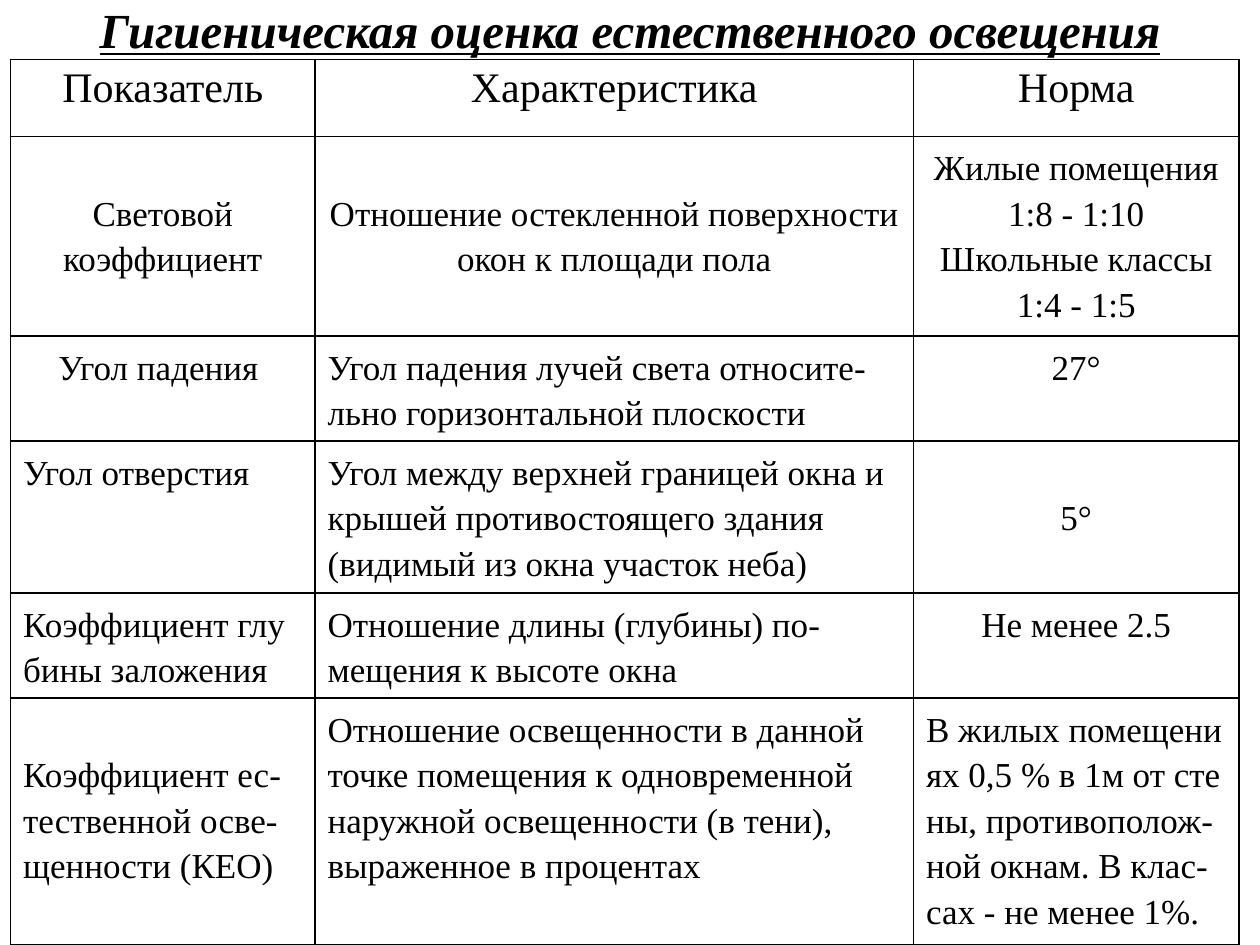
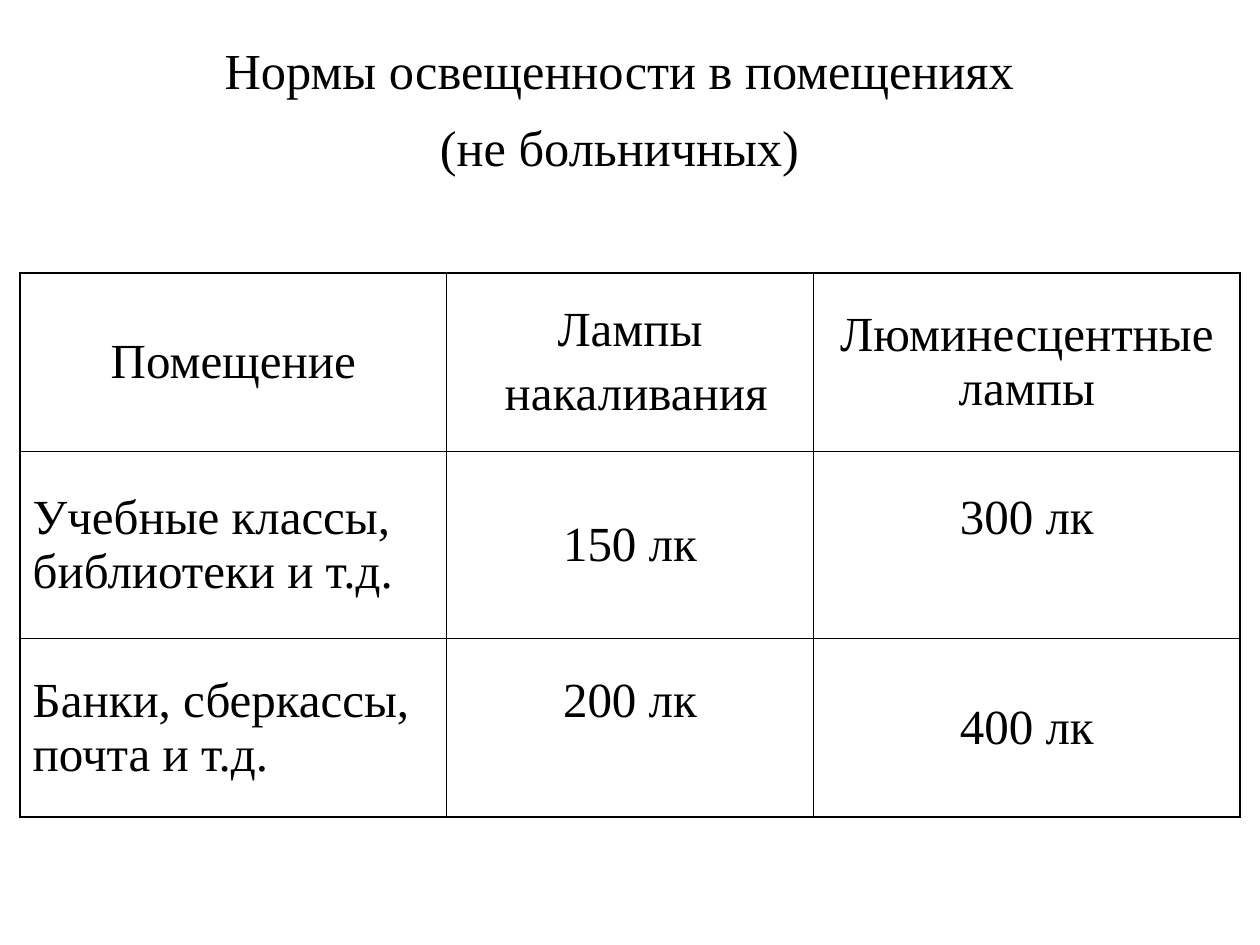
from lxml import etree
from pptx import Presentation
from pptx.dml.color import RGBColor
from pptx.enum.text import MSO_ANCHOR, PP_ALIGN
from pptx.oxml.ns import qn
from pptx.util import Pt

LEFT, CENTER = PP_ALIGN.LEFT, PP_ALIGN.CENTER
TOP, MIDDLE = MSO_ANCHOR.TOP, MSO_ANCHOR.MIDDLE
BLACK = RGBColor(0, 0, 0)
FONT = "Times New Roman"
BLANK_LAYOUT = 6
CELL_MARGIN = 3.6

# A cell is its text, one paragraph a line, then any format values that differ
# from the table's own; pad_top and pad_bottom are extra margins in points.
SLIDES = [
    {
        "title": {
            "text": "Гигиеническая оценка естественного освещения",
            "place": (0, -6, 720, 45),
            "font": {"size": Pt(28), "bold": True, "italic": True, "underline": True},
            "paragraph": {},
        },
        "table": {
            "place": (6, 34),
            "columns": (174, 342, 186),
            "rows": (44, 114, 60, 87, 60, 141),
            "header_size": 24,
            "body_size": 20,
            "anchor": TOP,
            "paragraph": {"line_spacing": Pt(26)},
            "cells": [
                [("Показатель", {}), ("Характеристика", {}), ("Норма", {})],
                [("Световой коэффициент", {"pad_top": 26}),
                 ("Отношение остекленной поверхности окон к площади пола", {"pad_top": 26}),
                 ("Жилые помещения\n1:8 - 1:10\nШкольные классы\n1:4 - 1:5", {})],
                [("Угол падения ", {}),
                 ("Угол падения лучей света относите-льно горизонтальной плоскости",
                  {"align": LEFT}),
                 ("27°", {})],
                [("Угол отверстия", {"align": LEFT}),
                 ("Угол между верхней границей окна и крышей противостоящего здания "
                  "(видимый из окна участок неба)", {"align": LEFT}),
                 ("5°", {"pad_top": 26})],
                [("Коэффициент глу бины заложения", {"align": LEFT}),
                 ("Отношение длины (глубины) по-мещения к высоте окна", {"align": LEFT}),
                 ("Не менее 2.5", {})],
                [("Коэффициент ес-тественной осве-щенности (КЕО)",
                  {"align": LEFT, "pad_top": 26}),
                 ("Отношение освещенности в данной точке помещения к одновременной "
                  "наружной освещенности (в тени), выраженное в процентах", {"align": LEFT}),
                 ("В жилых помещени ях 0,5 % в 1м от сте ны, противополож-ной окнам. "
                  "В клас-сах - не менее 1%.", {"align": LEFT})],
            ],
        },
    },
    {
        "title": {
            "text": "Нормы освещенности в помещениях\n(не больничных)",
            "place": (0, 12, 708, 90),
            "font": {"size": Pt(28.8)},
            "paragraph": {"line_spacing": Pt(44)},
        },
        "table": {
            "place": (11.5, 156),
            "columns": (243.5, 210, 243.5),
            "rows": (102, 107, 102),
            "header_size": 28,
            "body_size": 28,
            "anchor": MIDDLE,
            "paragraph": {"space_before": Pt(5.6)},
            "cells": [
                [("Помещение", {}), ("Лампы\n накаливания", {}),
                 ("Люминесцентные лампы", {})],
                [("Учебные классы, библиотеки и т.д.", {"align": LEFT}),
                 ("150 лк", {}), ("300 лк", {"pad_bottom": 31})],
                [("Банки, сберкассы, почта и т.д.", {"align": LEFT}),
                 ("200 лк", {"pad_bottom": 31}), ("400 лк", {})],
            ],
        },
    },
]


def set_values(target, values):
    for name, value in values.items():
        setattr(target, name, value)


def write_text(frame, text, font, paragraph):
    for index, line in enumerate(text.split("\n")):
        para = frame.paragraphs[0] if index == 0 else frame.add_paragraph()
        set_values(para, paragraph)
        span = para.add_run()
        span.text = line
        set_values(span.font, {"name": FONT, **font})
        span.font.color.rgb = BLACK


def draw_borders(cell):
    properties = cell._tc.get_or_add_tcPr()
    for position, side in enumerate(("lnL", "lnR", "lnT", "lnB")):
        line = etree.Element(qn(f"a:{side}"), w=str(Pt(1)))
        fill = etree.SubElement(line, qn("a:solidFill"))
        etree.SubElement(fill, qn("a:srgbClr"), val=str(BLACK))
        properties.insert(position, line)


def add_title(page, title):
    box = page.shapes.add_textbox(*map(Pt, title["place"]))
    set_values(box.text_frame, {"word_wrap": True, "vertical_anchor": MIDDLE})
    write_text(box.text_frame, title["text"], title["font"],
               {"alignment": CENTER, **title["paragraph"]})


def add_grid(page, grid):
    columns, rows = grid["columns"], grid["rows"]
    size = (sum(columns), sum(rows))
    table = page.shapes.add_table(len(rows), len(columns),
                                  *map(Pt, grid["place"] + size)).table
    set_values(table, {"first_row": False, "horz_banding": False})
    for column, width in zip(table.columns, columns):
        column.width = Pt(width)
    for index, (row, height) in enumerate(zip(table.rows, rows)):
        row.height = Pt(height)
        font_size = grid["body_size"] if index else grid["header_size"]
        for cell, (text, changes) in zip(row.cells, grid["cells"][index]):
            set_values(cell, {
                "vertical_anchor": grid["anchor"],
                "margin_top": Pt(CELL_MARGIN + changes.get("pad_top", 0)),
                "margin_bottom": Pt(CELL_MARGIN + changes.get("pad_bottom", 0)),
            })
            cell.fill.background()
            draw_borders(cell)
            write_text(cell.text_frame, text, {"size": Pt(font_size)},
                       {"alignment": changes.get("align", CENTER), **grid["paragraph"]})


def main():
    deck = Presentation()
    set_values(deck, {"slide_width": Pt(720), "slide_height": Pt(540)})
    for content in SLIDES:
        page = deck.slides.add_slide(deck.slide_layouts[BLANK_LAYOUT])
        add_title(page, content["title"])
        add_grid(page, content["table"])
    deck.save("out.pptx")


if __name__ == "__main__":
    main()
